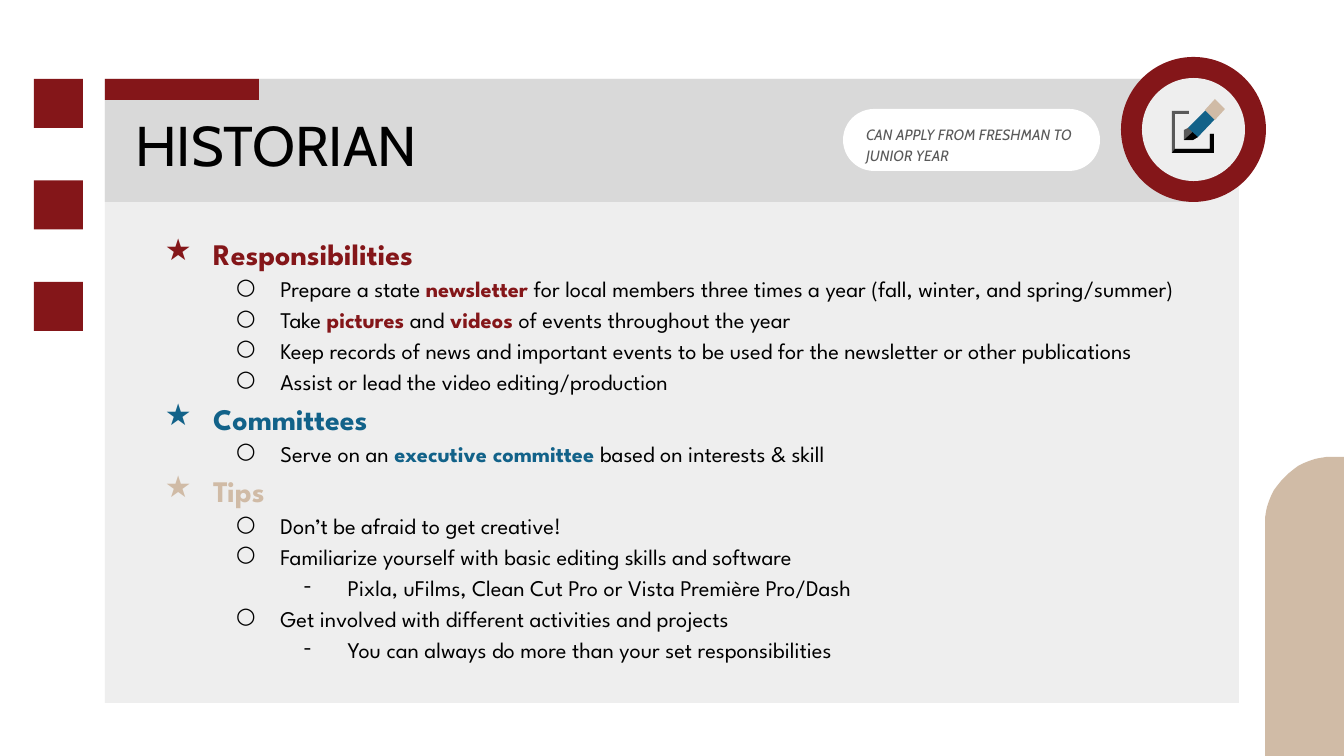
import math
from lxml import etree
from pptx import Presentation
from pptx import util as u
from pptx.dml.color import RGBColor
from pptx.enum import shapes, text
from pptx.oxml.ns import qn

PX = 914400 / 134.4
COLORS = {
    "red": "841619", "blue": "126289", "tan": "D0BBA6", "black": "000000",
    "gray": "595959", "band": "D9D9D9", "panel": "EEEEEE", "white": "FFFFFF",
}
RECT, OVAL = shapes.MSO_SHAPE.RECTANGLE, shapes.MSO_SHAPE.OVAL
PILL = shapes.MSO_SHAPE.ROUNDED_RECTANGLE


def paint(shape, color):
    shape.shadow.inherit = False
    shape.fill.solid()
    shape.fill.fore_color.rgb = RGBColor.from_string(COLORS[color])
    shape.line.fill.background()
    return shape


def place(shape, box, anchor):
    shape.left, shape.top, shape.width, shape.height = [round(n * PX) for n in box]
    frame = shape.text_frame
    frame.word_wrap = True
    frame.auto_size = text.MSO_AUTO_SIZE.NONE
    frame.vertical_anchor = anchor
    frame.margin_left = frame.margin_right = round(13 * PX)
    frame.margin_top = frame.margin_bottom = round(13 * PX)
    return frame


deck = Presentation()
deck.slide_width, deck.slide_height = round(1344 * PX), round(756 * PX)
slide = deck.slides.add_slide(deck.slide_layouts[1])
title, duties = slide.placeholders

# Panel, header band, icon ring, note pill and side squares
blocks = [
    (RECT, (105, 79, 1134, 624), "panel"),
    (RECT, (105, 79, 1091, 123), "band"),
    (RECT, (105, 79, 154, 21), "red"),
    (OVAL, (1121, 57, 145, 145), "red"),
    (OVAL, (1142, 78, 103, 103), "panel"),
    (PILL, (843, 109, 257, 62), "white"),
]
blocks += [(RECT, (34, 79 + 101.5 * row, 49, 49), "red") for row in range(3)]
for preset, box, color in blocks:
    block = paint(slide.shapes.add_shape(preset, *[round(n * PX) for n in box]), color)
    if preset == PILL:
        block.adjustments[0] = 0.5

# Corner tab with one rounded corner, and the pencil-and-paper icon
corner = [(1332 - 67 * math.cos(math.radians(a)), 524 - 67 * math.sin(math.radians(a)))
          for a in range(0, 91, 5)]
outlines = [
    (corner + [(1344, 457), (1344, 756), (1265, 756)], "tan"),
    ([(1188, 128), (1184, 130), (1184, 140), (1193, 140), (1198, 137), (1196, 129)], "gray"),
    ([(1196, 129), (1184, 140), (1193, 140), (1198, 137)], "black"),
    ([(1210, 106), (1188, 128), (1198, 137), (1219, 115)], "blue"),
    ([(1215, 99), (1205, 110), (1215, 120), (1225, 109)], "tan"),
    ([(1172, 111), (1172, 153), (1214, 153), (1214, 134), (1210, 134), (1210, 149),
      (1175, 149), (1175, 114), (1189, 114), (1189, 111)], "gray"),
    ([(1210, 134), (1210, 149), (1175, 149), (1172, 153), (1214, 153), (1214, 134)], "black"),
]
for points, color in outlines:
    builder = slide.shapes.build_freeform(*points[0], scale=PX)
    builder.add_line_segments(points[1:], close=True)
    paint(builder.convert_to_shape(), color)

# Title and body go in front of the panel
for holder in (duties, title):
    holder.element.getparent().append(holder.element)

heading = place(title, (122, 117, 711, 54), text.MSO_ANCHOR.MIDDLE).paragraphs[0]
heading.text = "HISTORIAN"
heading.alignment = text.PP_ALIGN.LEFT
heading.font.name, heading.font.size = "Cabin", u.Pt(30)
heading.font.color.rgb = RGBColor.from_string(COLORS["black"])

# Duties: (level, text) under each heading, with ** around accented words
sections = [
    ("Responsibilities", "red", [
        (1, "Prepare a state **newsletter** for local members three times a year "
            "(fall, winter, and spring/summer)"),
        (1, "Take **pictures** and **videos** of events throughout the year"),
        (1, "Keep records of news and important events to be used for the newsletter "
            "or other publications"),
        (1, "Assist or lead the video editing/production"),
    ]),
    ("Committees", "blue", [
        (1, "Serve on an **executive committee** based on interests & skill"),
    ]),
    ("Tips", "tan", [
        (1, "Don’t be afraid to get creative!"),
        (1, "Familiarize yourself with basic editing skills and software"),
        (2, "Pixla, uFilms, Clean Cut Pro or Vista Première Pro/Dash"),
        (1, "Get involved with different activities and projects"),
        (2, "You can always do more than your set responsibilities"),
    ]),
]
LEVELS = [("★", 16, 0.36), ("○", 12, 0.33), ("-", 12, 0.33)]
frame = place(duties, (133, 199, 1066, 495), text.MSO_ANCHOR.MIDDLE)
line = frame.paragraphs[0]
for name, accent, items in sections:
    for level, words in [(0, f"**{name}**")] + items:
        if line.runs:
            line = frame.add_paragraph()
        bullet, size, hang = LEVELS[level]
        color = COLORS["black" if level else accent]
        line.level = level
        props = line._p.get_or_add_pPr()
        props.set("marL", str(u.Inches(0.5 * (level + 1))))
        props.set("indent", str(-u.Inches(hang)))
        tint = etree.SubElement(props, qn("a:buClr"))
        etree.SubElement(tint, qn("a:srgbClr"), val=color)
        etree.SubElement(props, qn("a:buFont"), typeface="League Spartan")
        etree.SubElement(props, qn("a:buChar"), char=bullet)
        line.alignment = text.PP_ALIGN.LEFT
        line.line_spacing = 1.15
        line.space_before = u.Pt(0)
        line.font.name, line.font.size = "League Spartan", u.Pt(size)
        line.font.color.rgb = RGBColor.from_string(color)
        for i, part in enumerate(words.split("**")):
            if part:
                run = line.add_run()
                run.text = part
                if i % 2:
                    run.font.bold = True
                    run.font.color.rgb = RGBColor.from_string(COLORS[accent])

# Eligibility note
note_box = slide.shapes.add_textbox(0, 0, 0, 0)
note = place(note_box, (853, 110, 253, 66), text.MSO_ANCHOR.TOP).paragraphs[0]
note.text = "CAN APPLY FROM FRESHMAN TO JUNIOR YEAR"
note.line_spacing = 1.15
note.font.name, note.font.size, note.font.italic = "Cabin", u.Pt(8), True
note.font.color.rgb = RGBColor.from_string(COLORS["gray"])

deck.save("out.pptx")
